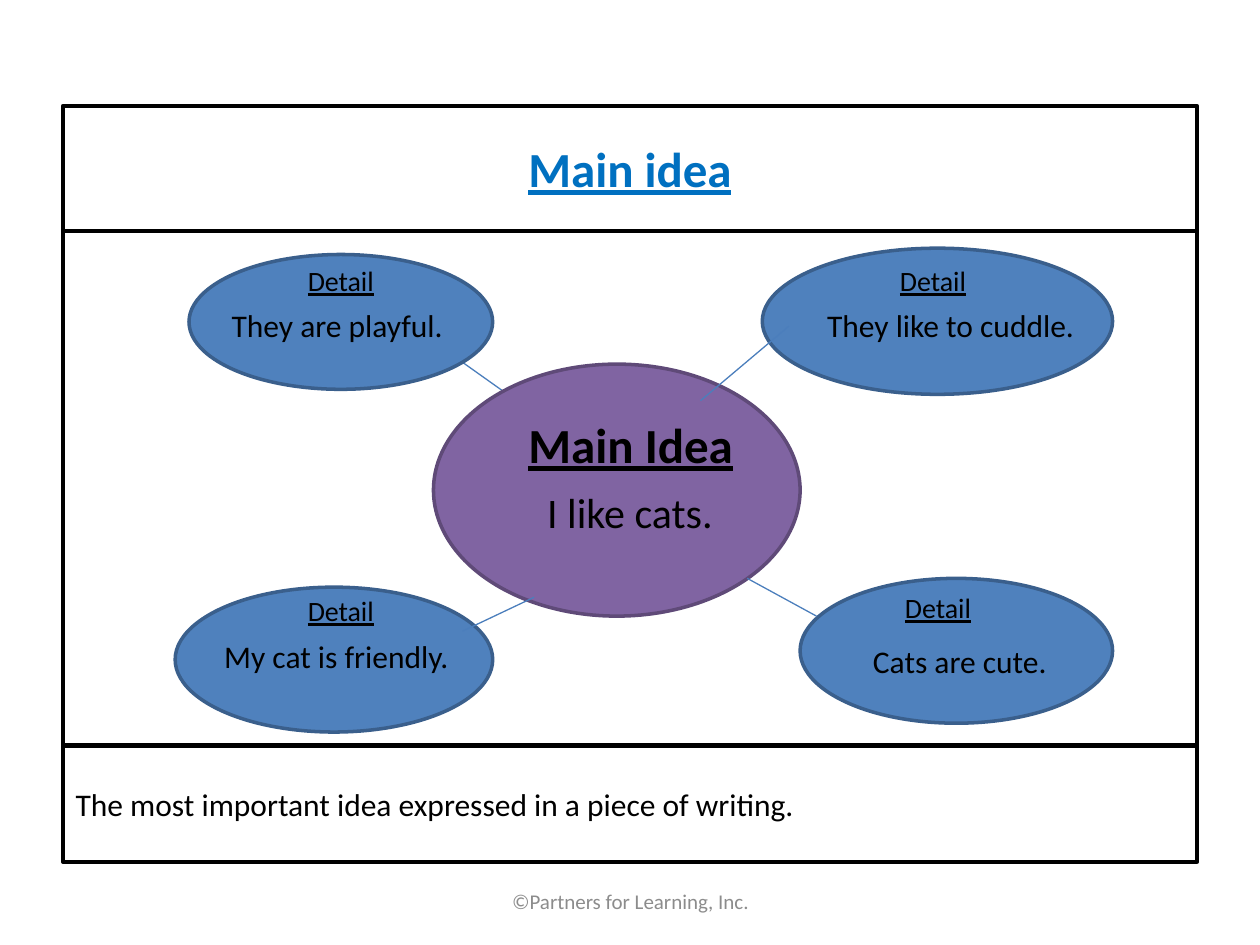
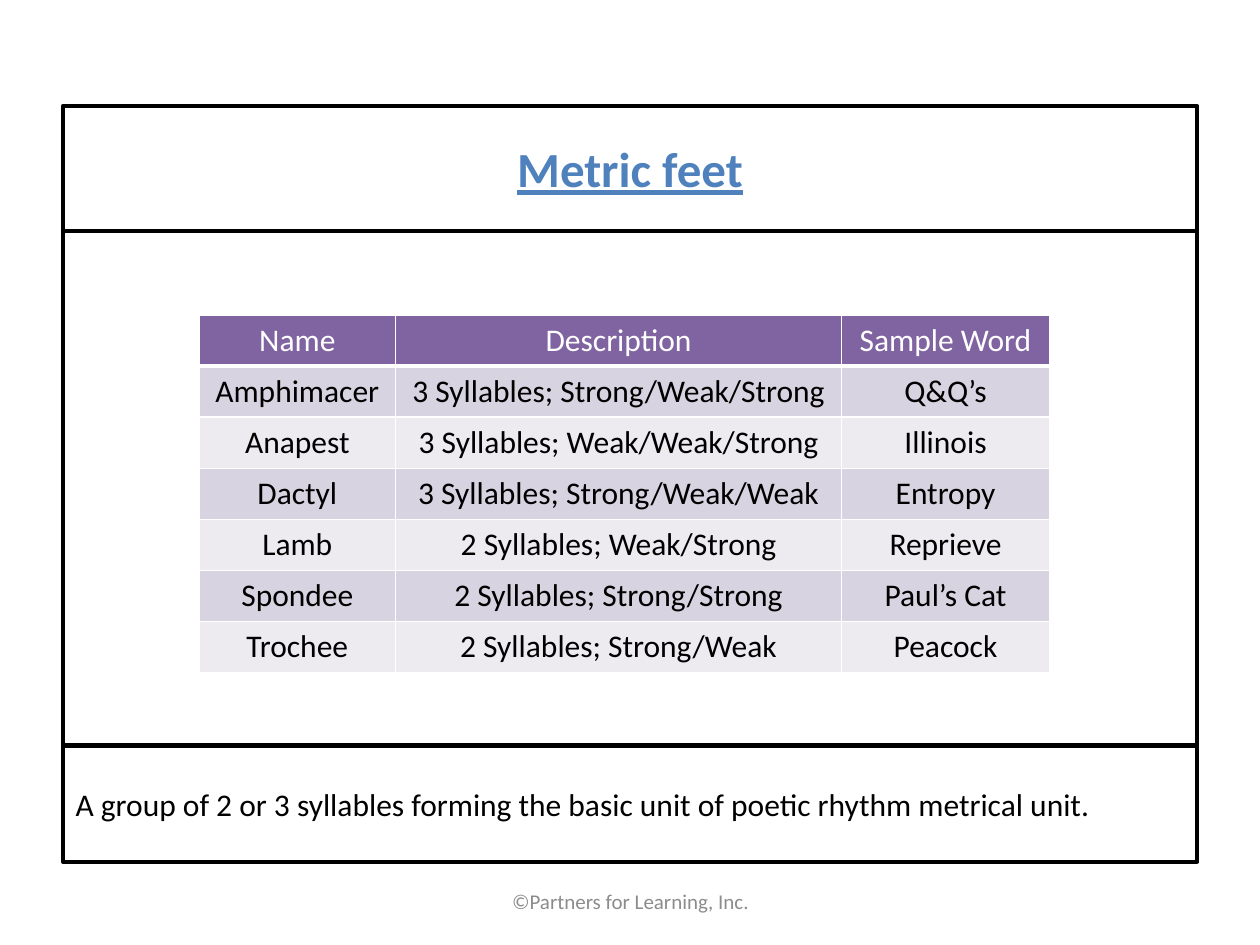
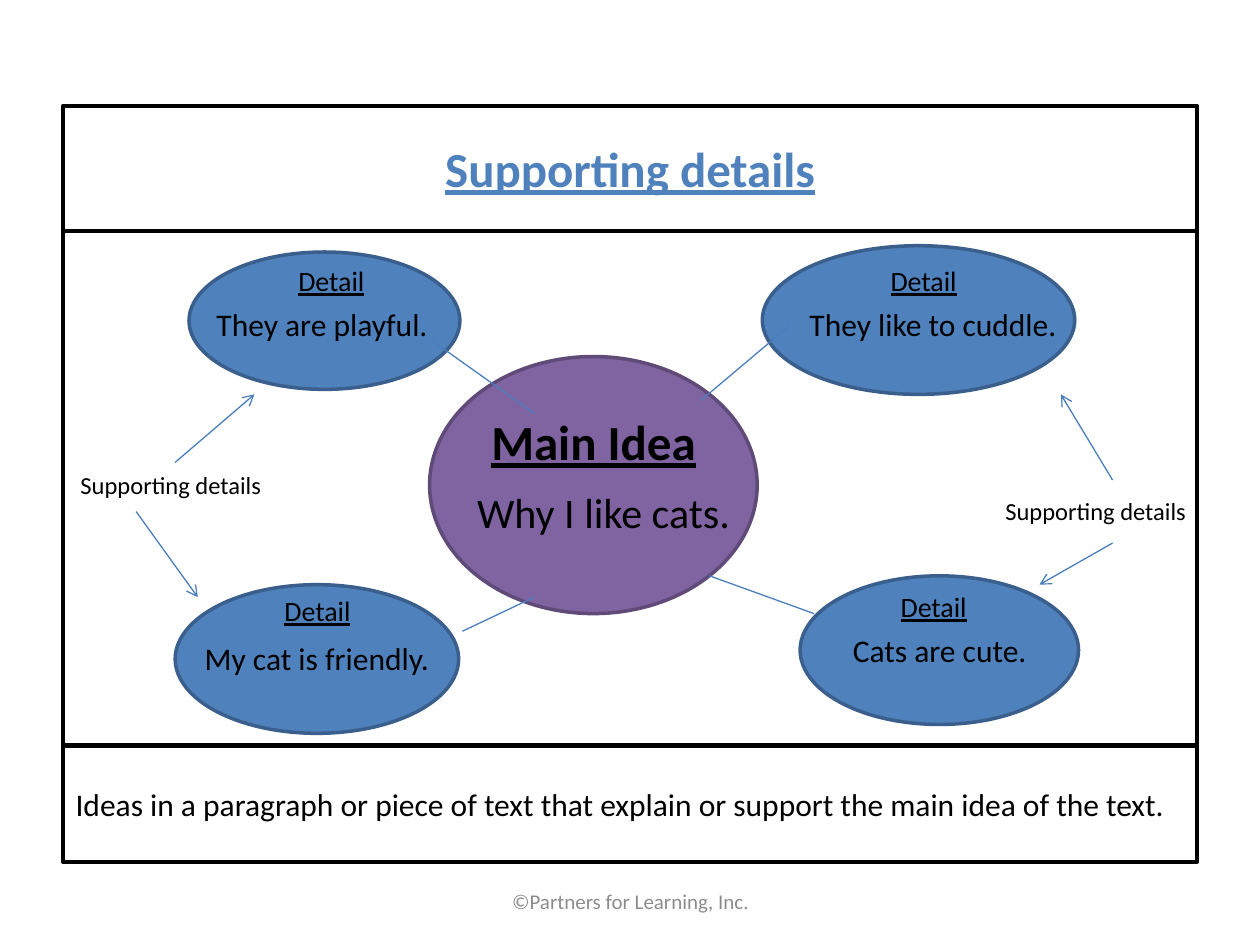
import pptx
import pptx.dml.color
import pptx.enum.shapes
import pptx.enum.text
import pptx.oxml
import pptx.oxml.ns
import pptx.util

RGB = pptx.dml.color.RGBColor
ALIGN = pptx.enum.text.PP_ALIGN
ANCHOR = pptx.enum.text.MSO_ANCHOR
SHAPE = pptx.enum.shapes.MSO_SHAPE

BLACK = RGB(0x00, 0x00, 0x00)
WHITE = RGB(0xFF, 0xFF, 0xFF)
GRAY = RGB(0x8C, 0x8C, 0x8C)
BRIGHT_BLUE = RGB(0x00, 0x70, 0xC0)
BLUE = RGB(0x4F, 0x81, 0xBD)
BLUE_EDGE = RGB(0x3A, 0x5F, 0x8C)
SPOKE_BLUE = RGB(0x4B, 0x7E, 0xBC)
PURPLE = RGB(0x80, 0x64, 0xA2)
PURPLE_EDGE = RGB(0x5F, 0x4A, 0x78)
LILAC = RGB(0xD8, 0xD3, 0xE0)
PALE_LILAC = RGB(0xED, 0xEA, 0xF0)

EMU_PER_PX = 9144
FONT = "Calibri"
COPYRIGHT = "©Partners for Learning, Inc."
HEADING = {"size": 28, "bold": True, "underline": True}
DETAIL_HEADING = {"size": 16, "underline": True}
TERM_BAND = (50, 84, 900, 99)
EXAMPLE_BAND = (50, 183, 900, 408)
DEFINITION_BAND = (50, 592, 900, 92)


def px(*lengths):
    return [pptx.util.Emu(length * EMU_PER_PX) for length in lengths]


class CardDeck:
    def __init__(self):
        self.presentation = pptx.Presentation()
        self.presentation.slide_width, self.presentation.slide_height = px(1000, 750)
        self.slide = None

    def set_text(self, frame, text, color=BLACK, align=ALIGN.CENTER,
                 anchor=ANCHOR.TOP, **font_values):
        frame_values = {"word_wrap": True, "vertical_anchor": anchor,
                        "auto_size": pptx.enum.text.MSO_AUTO_SIZE.NONE}
        for key, value in frame_values.items():
            setattr(frame, key, value)
        frame.text = text
        paragraph = frame.paragraphs[0]
        paragraph.alignment = align
        paragraph.space_before = pptx.util.Pt(0)
        font_values["size"] = pptx.util.Pt(font_values["size"])
        for key, value in {"name": FONT, **font_values}.items():
            setattr(paragraph.runs[0].font, key, value)
        paragraph.runs[0].font.color.rgb = color
        return paragraph

    def fill_placeholder(self, placeholder, bounds, text, **style):
        for key, value in zip(("left", "top", "width", "height"), px(*bounds)):
            setattr(placeholder, key, value)
        return self.set_text(placeholder.text_frame, text, anchor=ANCHOR.MIDDLE, **style)

    def label(self, bounds, text, **style):
        box = self.slide.shapes.add_textbox(*px(*bounds))
        self.set_text(box.text_frame, text, **style)

    def outline(self, kind, bounds, edge, weight, fill=None):
        shape = self.slide.shapes.add_shape(kind, *px(*bounds))
        shape.shadow.inherit = False
        if fill is None:
            shape.fill.background()
        else:
            shape.fill.solid()
            shape.fill.fore_color.rgb = fill
        shape.line.color.rgb = edge
        shape.line.width = pptx.util.Pt(weight)

    def spoke(self, ends, arrow=False):
        line = self.slide.shapes.add_connector(
            pptx.enum.shapes.MSO_CONNECTOR.STRAIGHT, *px(*ends))
        line.line.color.rgb = SPOKE_BLUE
        line.line.width = pptx.util.Pt(0.75)
        properties = line._element.spPr
        if arrow:
            properties.find(pptx.oxml.ns.qn("a:ln")).append(
                properties.makeelement(pptx.oxml.ns.qn("a:tailEnd"), {"type": "arrow"}))
        properties.append(properties.makeelement(pptx.oxml.ns.qn("a:effectLst")))

    def card(self, term, definition, term_color=BLUE):
        layout = self.presentation.slide_layouts[1]
        self.slide = self.presentation.slides.add_slide(layout)
        title, body = self.slide.placeholders
        self.fill_placeholder(title, TERM_BAND, term, color=term_color, **HEADING)
        paragraph = self.fill_placeholder(body, DEFINITION_BAND, definition,
                                          align=ALIGN.LEFT, size=18)
        properties = paragraph._p.get_or_add_pPr()
        for key in ("marL", "indent"):
            properties.set(key, "0")
        properties.append(properties.makeelement(pptx.oxml.ns.qn("a:buNone")))
        for band in (TERM_BAND, EXAMPLE_BAND, DEFINITION_BAND):
            self.outline(SHAPE.RECTANGLE, band, BLACK, 2.25)
        self.label((342, 695, 317, 40), COPYRIGHT, color=GRAY,
                   anchor=ANCHOR.MIDDLE, size=12)

    def idea_web(self, hub, heading_at, idea_at, idea, details, spokes_behind, spokes):
        for ends in spokes_behind:
            self.spoke(ends)
        for _, oval, _, _, _ in details:
            self.outline(SHAPE.OVAL, oval, BLUE_EDGE, 2, BLUE)
        self.outline(SHAPE.OVAL, hub, PURPLE_EDGE, 2, PURPLE)
        self.label(heading_at, "Main Idea", **HEADING)
        for ends in spokes:
            self.spoke(ends)
        self.label(idea_at, idea, size=24)
        for detail, _, detail_heading_at, detail_at, align in details:
            self.label(detail_heading_at, "Detail", **DETAIL_HEADING)
            self.label(detail_at, detail, align=align, size=18)

    def cell_borders(self, cell, bottom):
        properties = cell._tc.get_or_add_tcPr()
        for index, side in enumerate("LRTB"):
            width = pptx.util.Pt(bottom if side == "B" else 1)
            properties.insert(index, pptx.oxml.parse_xml(
                f'<a:ln{side} {pptx.oxml.ns.nsdecls("a")} w="{width}"><a:solidFill>'
                f'<a:srgbClr val="{WHITE}"/></a:solidFill></a:ln{side}>'))

    def table(self, left, top, widths, row_height, rows):
        grid = self.slide.shapes.add_table(
            len(rows), len(widths),
            *px(left, top, sum(widths), row_height * len(rows))).table
        for column, width in zip(grid.columns, px(*widths)):
            column.width = width
        for r, row in enumerate(rows):
            is_header = r == 0
            for c, text in enumerate(row):
                cell = grid.cell(r, c)
                cell.fill.solid()
                cell.fill.fore_color.rgb = (
                    PURPLE if is_header else LILAC if r % 2 else PALE_LILAC)
                self.cell_borders(cell, 3 if is_header else 1)
                self.set_text(cell.text_frame, text, size=18, bold=False,
                              color=WHITE if is_header else BLACK)


def main():
    deck = CardDeck()
    upper_right_spoke = (556, 318, 626, 259)
    upper_left_spoke = (424, 328, 341, 269)
    lower_left_spoke = (424, 474, 367, 501)

    deck.card("Main idea", "The most important idea expressed in a piece of writing.",
              BRIGHT_BLUE)
    deck.idea_web(
        (344, 289, 291, 200), (367, 324, 267, 57), (381, 381, 238, 50), "I like cats.",
        [
            ("Cats are cute.", (635, 459, 248, 115), (676, 464, 137, 37),
             (683, 505, 158, 40), ALIGN.LEFT),
            ("They like to cuddle.", (605, 197, 278, 116), (672, 204, 137, 37),
             (626, 238, 257, 40), ALIGN.CENTER),
            ("My cat is friendly.", (139, 466, 252, 115), (202, 466, 137, 37),
             (150, 501, 234, 40), ALIGN.CENTER),
            ("They are playful. ", (150, 202, 241, 107), (202, 204, 137, 37),
             (157, 238, 227, 40), ALIGN.CENTER),
        ],
        [upper_left_spoke],
        [upper_right_spoke, (593, 459, 648, 489), lower_left_spoke])

    deck.card("Metric feet", "A group of 2 or 3 syllables forming the basic unit of "
              "poetic rhythm metrical unit.")
    deck.table(158, 250, (156, 354, 165), 40, [
        ("Name", "Description", "Sample Word"),
        ("Amphimacer", "3 Syllables; Strong/Weak/Strong", "Q&Q’s"),
        ("Anapest", "3 Syllables; Weak/Weak/Strong", "Illinois"),
        ("Dactyl", "3 Syllables; Strong/Weak/Weak", "Entropy"),
        ("Lamb", "2 Syllables; Weak/Strong", "Reprieve"),
        ("Spondee", "2 Syllables; Strong/Strong", "Paul’s Cat"),
        ("Trochee", "2 Syllables; Strong/Weak", "Peacock"),
    ])

    deck.card("Supporting details", "Ideas in a paragraph or piece of text that explain "
              "or support the main idea of the text.")
    deck.idea_web(
        (341, 283, 260, 204), (352, 322, 238, 58), (362, 381, 234, 50),
        "Why I like cats.",
        [
            ("Cats are cute.", (635, 457, 221, 118), (680, 463, 122, 38),
             (667, 496, 158, 40), ALIGN.LEFT),
            ("They like to cuddle.", (605, 195, 248, 118), (672, 204, 122, 38),
             (626, 237, 229, 41), ALIGN.CENTER),
            ("My cat is friendly.", (139, 464, 225, 118), (191, 466, 122, 38),
             (147, 502, 209, 41), ALIGN.CENTER),
            ("They are playful. ", (150, 200, 215, 109), (202, 204, 122, 38),
             (157, 237, 203, 41), ALIGN.CENTER),
        ],
        [],
        [upper_right_spoke, upper_left_spoke, (563, 457, 646, 487), lower_left_spoke])
    for ends in ((139, 367, 202, 313), (108, 406, 157, 474),
                 (883, 381, 842, 313), (883, 431, 825, 464)):
        deck.spoke(ends, arrow=True)
    for left, top in ((54, 368), (788, 389)):
        deck.label((left, top, 171, 34), "Supporting details", align=ALIGN.LEFT, size=14)

    deck.presentation.save("out.pptx")


if __name__ == "__main__":
    main()
